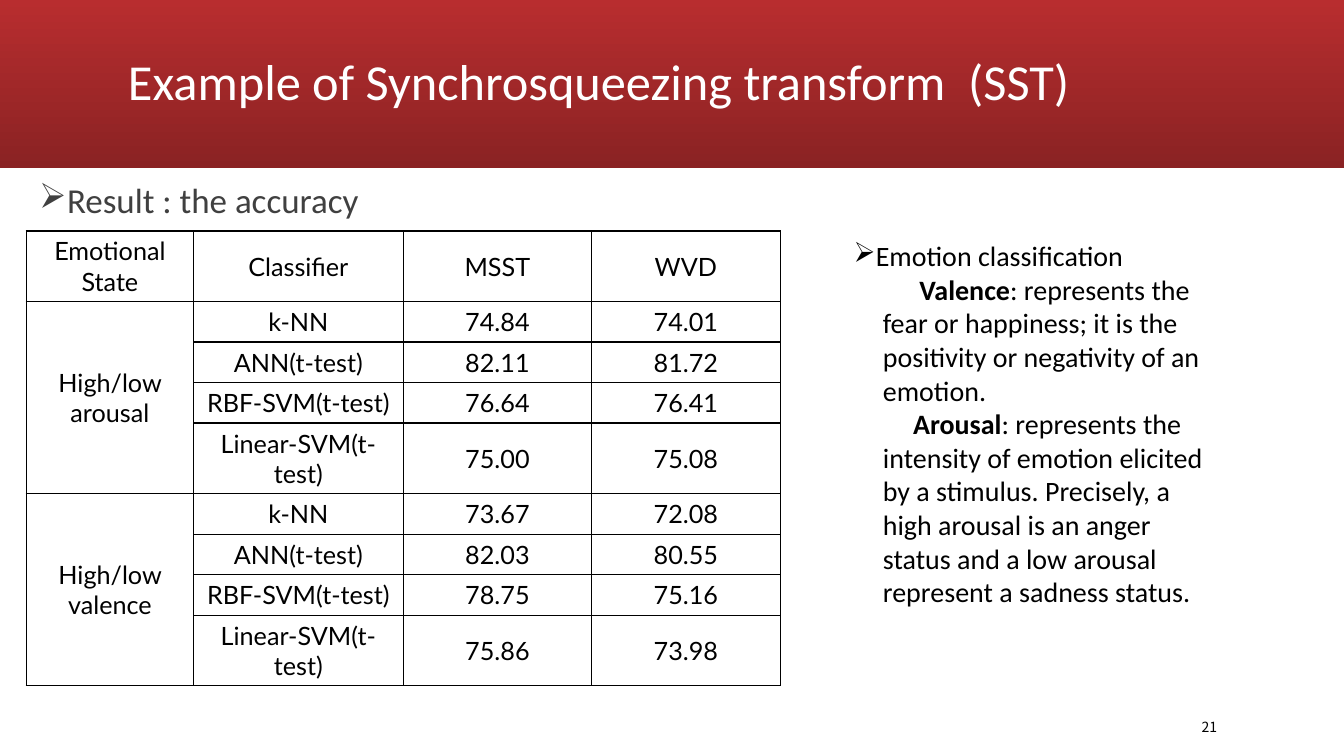
from lxml.etree import SubElement
from pptx import Presentation
from pptx.dml.color import RGBColor
from pptx.enum.shapes import MSO_SHAPE
from pptx.enum.text import MSO_ANCHOR, PP_ALIGN
from pptx.oxml import parse_xml
from pptx.oxml.ns import nsdecls, qn
from pptx.util import Cm, Pt

WHITE = RGBColor(0xFF, 0xFF, 0xFF)
BLACK = RGBColor(0, 0, 0)
GREY = RGBColor(0x40, 0x40, 0x40)
BAND_TOP = RGBColor(0xB8, 0x2D, 0x2F)
BAND_BOTTOM = RGBColor(0x8A, 0x22, 0x23)

TITLE = "Example of Synchrosqueezing transform  (SST)"
RESULT = "Result : the accuracy"
PAGE_NUMBER = "21"
HEADER = ("Emotional State", "Classifier", "MSST", "WVD")
CLASSIFIERS = ("k-NN", "ANN(t-test)", "RBF-SVM(t-test)", "Linear-SVM(t-test)")
ACCURACY = {
    "High/low arousal": (("74.84", "74.01"), ("82.11", "81.72"),
                         ("76.64", "76.41"), ("75.00", "75.08")),
    "High/low valence": (("73.67", "72.08"), ("82.03", "80.55"),
                         ("78.75", "75.16"), ("75.86", "73.98")),
}
EMOTION = "Emotion classification"
# term, explanation, first-line indent in cm
DEFINITIONS = (
    ("Valence", ": represents the fear or happiness; it is the positivity "
                "or negativity of an emotion.", 0.92),
    ("Arousal", ": represents the intensity of emotion elicited by a stimulus. "
                "Precisely, a high arousal is an anger status and a low arousal "
                "represent a sadness status.", 0.76),
)
COLUMN_WIDTHS = (4.22, 5.28, 4.75, 4.75)
ONE_LINE, TWO_LINES = 1.02, 1.78
GROUP_HEIGHTS = (ONE_LINE, ONE_LINE, ONE_LINE, TWO_LINES)
ROW_HEIGHTS = (TWO_LINES,) + GROUP_HEIGHTS * len(ACCURACY)


def style(para, name, size, color):
    para.font.name, para.font.size = name, Pt(size)
    para.font.color.rgb = color


def indent(para, left, first, bullet=None):
    """Set the left margin and first-line indent in cm, and an optional bullet."""
    settings = para._p.get_or_add_pPr()
    settings.set("marL", str(Cm(left)))
    settings.set("indent", str(Cm(first)))
    if bullet:
        settings.insert_element_before(
            parse_xml(f'<a:buChar {nsdecls("a")} char="{bullet}"/>'),
            "a:tabLst", "a:defRPr", "a:extLst")


def add_text(page, left, top, width, height):
    frame = page.shapes.add_textbox(
        Cm(left), Cm(top), Cm(width), Cm(height)).text_frame
    frame.word_wrap = True
    return frame


def add_borders(cell):
    settings = cell._tc.get_or_add_tcPr()
    for side in ("lnL", "lnR", "lnT", "lnB"):
        line = SubElement(settings, qn(f"a:{side}"), w=str(Pt(1)))
        fill = SubElement(line, qn("a:solidFill"))
        SubElement(fill, qn("a:srgbClr"), val=str(BLACK))


def add_title(page):
    band = page.shapes.add_shape(MSO_SHAPE.RECTANGLE, 0, 0, Cm(33.87), Cm(4.24))
    band.shadow.inherit = False
    band.line.fill.background()
    band.fill.gradient()
    band.fill.gradient_angle = 270
    for stop, color, position in zip(
            band.fill.gradient_stops, (BAND_TOP, BAND_BOTTOM), (0, 1)):
        stop.color.rgb = color
        stop.position = position
    title = page.shapes.title
    band._element.addnext(title._element)
    title.left, title.top = Cm(2.97), Cm(0.28)
    title.width, title.height = Cm(27.94), Cm(3.68)
    title.text_frame.text = TITLE
    title.text_frame.vertical_anchor = MSO_ANCHOR.MIDDLE
    para = title.text_frame.paragraphs[0]
    para.alignment = PP_ALIGN.LEFT
    para.line_spacing = 0.9
    style(para, "Calibri", 36, WHITE)


def add_accuracy_table(page):
    rows = [HEADER]
    for state, scores in ACCURACY.items():
        for index, (classifier, score) in enumerate(zip(CLASSIFIERS, scores)):
            rows.append(("" if index else state, classifier, *score))
    table = page.shapes.add_table(
        len(rows), len(HEADER), Cm(0.66), Cm(5.82),
        Cm(sum(COLUMN_WIDTHS)), Cm(sum(ROW_HEIGHTS))).table
    table.first_row = table.horz_banding = False
    for column, width in zip(table.columns, COLUMN_WIDTHS):
        column.width = Cm(width)
    for row, height, texts in zip(table.rows, ROW_HEIGHTS, rows):
        row.height = Cm(height)
        for cell, text in zip(row.cells, texts):
            cell.text = text
            cell.vertical_anchor = MSO_ANCHOR.MIDDLE
            para = cell.text_frame.paragraphs[0]
            para.alignment = PP_ALIGN.CENTER
            style(para, "Lato", 18, BLACK)
            add_borders(cell)
            cell.fill.background()
    size = len(CLASSIFIERS)
    for first in range(1, len(rows), size):
        table.cell(first, 0).merge(table.cell(first + size - 1, 0))


def add_emotion_notes(page):
    frame = add_text(page, 21.26, 5.89, 9.63, 9.65)
    para = frame.paragraphs[0]
    para.text = EMOTION
    style(para, "Calibri", 20, BLACK)
    indent(para, 0, 0, "➢")
    for term, explanation, first in DEFINITIONS:
        para = frame.add_paragraph()
        style(para, "Calibri", 20, BLACK)
        indent(para, 0.74, first)
        span = para.add_run()
        span.text = term
        span.font.bold = True
        para.add_run().text = explanation


def main():
    deck = Presentation()
    deck.slide_width, deck.slide_height = Cm(33.87), Cm(19.05)
    page = deck.slides.add_slide(deck.slide_layouts[5])
    add_title(page)

    para = add_text(page, 0.74, 4.5, 13.34, 1.4).paragraphs[0]
    para.text = RESULT
    para.line_spacing = 0.9
    style(para, "Calibri", 25, GREY)
    indent(para, 0.64, -0.64, "➢")

    add_accuracy_table(page)
    add_emotion_notes(page)

    frame = add_text(page, 28.58, 18.01, 2.34, 0.66)
    frame.vertical_anchor = MSO_ANCHOR.MIDDLE
    para = frame.paragraphs[0]
    para.text = PAGE_NUMBER
    para.alignment = PP_ALIGN.RIGHT
    para.line_spacing = 0.9
    style(para, "Noto Sans CJK TC", 10, BLACK)

    deck.save("out.pptx")


if __name__ == "__main__":
    main()
